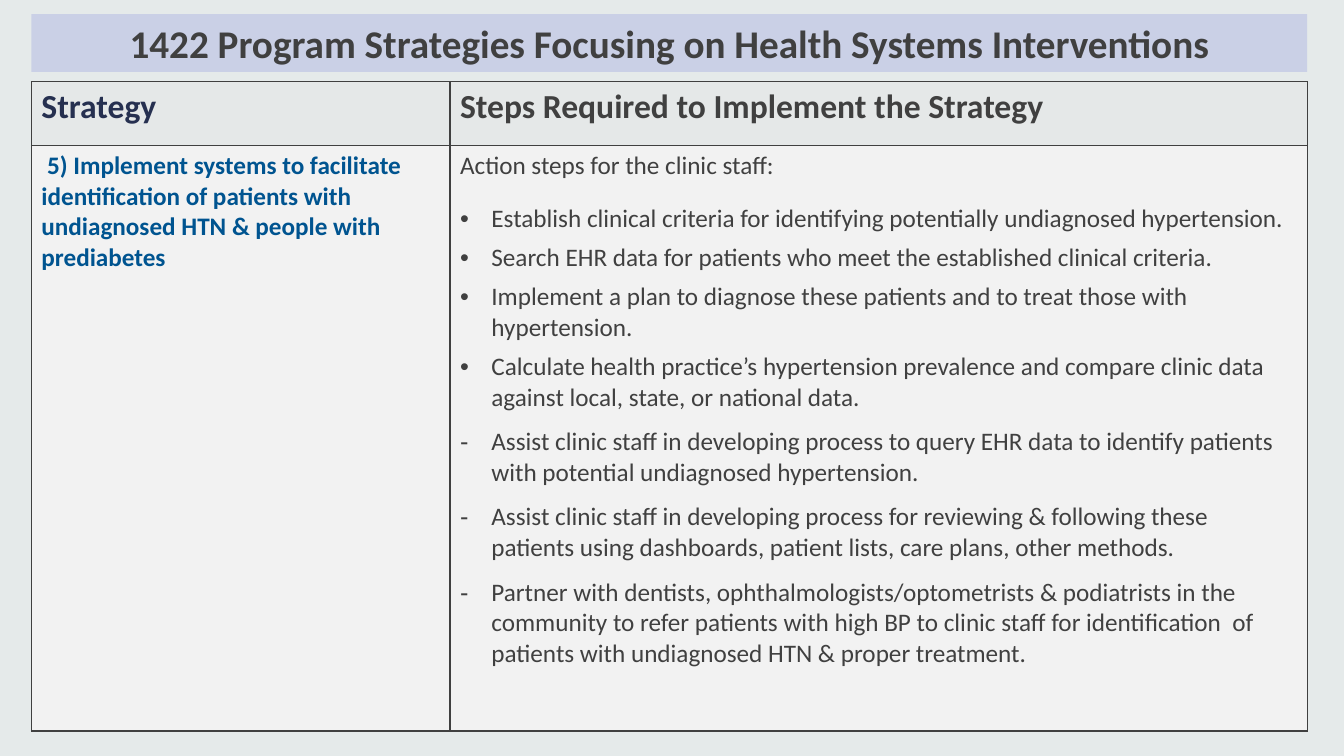
from dataclasses import dataclass

from lxml.etree import SubElement
from pptx import Presentation
from pptx.dml.color import RGBColor
from pptx.enum.shapes import MSO_SHAPE
from pptx.enum.text import MSO_ANCHOR, PP_ALIGN
from pptx.oxml.ns import qn
from pptx.util import Cm, Pt


@dataclass
class Theme:
    font: str = "Calibri"
    back: str = "E5EAEA"
    banner: str = "CAD0E6"
    head: str = "E5E8E8"
    body: str = "F2F2F2"
    ink: str = "404040"
    navy: str = "263050"
    blue: str = "005490"
    title: int = 28
    label: int = 24
    text: int = 18


class Deck:
    def __init__(self, theme):
        self.theme = theme
        self.file = Presentation()
        self.file.slide_width, self.file.slide_height = Cm(33.87), Cm(19.05)
        self.slide = self.file.slides.add_slide(self.file.slide_layouts[6])
        self.paint(self.slide.background.fill, theme.back)

    def paint(self, fill, color):
        fill.solid()
        fill.fore_color.rgb = RGBColor.from_string(color)

    def style(self, para, size, color, bold=False):
        for run in para.runs:
            font = run.font
            font.name, font.size, font.bold = self.theme.font, Pt(size), bold
            font.color.rgb = RGBColor.from_string(color)

    def banner(self, text, left, top, width, height):
        box = self.slide.shapes.add_shape(
            MSO_SHAPE.RECTANGLE, Cm(left), Cm(top), Cm(width), Cm(height))
        box.shadow.inherit = False
        box.line.fill.background()
        self.paint(box.fill, self.theme.banner)
        frame = box.text_frame
        frame.text = text
        frame.vertical_anchor = MSO_ANCHOR.MIDDLE
        para = frame.paragraphs[0]
        para.alignment = PP_ALIGN.CENTER
        self.style(para, self.theme.title, self.theme.ink, True)

    def table(self, left, top, widths, heights):
        grid = self.slide.shapes.add_table(
            len(heights), len(widths), Cm(left), Cm(top),
            Cm(sum(widths)), Cm(sum(heights))).table
        grid.first_row = grid.horz_banding = False
        for col, width in zip(grid.columns, widths):
            col.width = Cm(width)
        for row, height in zip(grid.rows, heights):
            row.height = Cm(height)
        return grid

    def cell(self, cell, text, fill, size, color, bold=False):
        self.border(cell)
        self.paint(cell.fill, fill)
        cell.text_frame.text = text
        for para in cell.text_frame.paragraphs:
            self.style(para, size, color, bold)

    def border(self, cell):
        props = cell._tc.get_or_add_tcPr()
        for side in ("a:lnL", "a:lnR", "a:lnT", "a:lnB"):
            line = SubElement(props, qn(side), w=str(Pt(1)))
            fill = SubElement(line, qn("a:solidFill"))
            SubElement(fill, qn("a:srgbClr"), val=self.theme.ink)

    def bullet(self, para, mark, gap):
        para.space_before = Pt(gap)
        props = para._p.get_or_add_pPr()
        props.set("marL", str(Cm(0.79)))
        props.set("indent", str(-Cm(0.79)))
        SubElement(props, qn("a:buFont"), typeface="Arial")
        SubElement(props, qn("a:buChar"), char=mark)


INTRO = "Action steps for the clinic staff:"

# Mark, gap above in points, wording
STEPS = [
    ("•", 15.8, "Establish clinical criteria for identifying potentially undiagnosed hypertension."),
    ("•", 6, "Search EHR data for patients who meet the established clinical criteria."),
    ("•", 6, "Implement a plan to diagnose these patients and to treat those with hypertension."),
    ("•", 6, "Calculate health practice’s hypertension prevalence and compare clinic data "
             "against local, state, or national data."),
    ("-", 9.8, "Assist clinic staff in developing process to query EHR data to identify "
               "patients with potential undiagnosed hypertension."),
    ("-", 9.8, "Assist clinic staff in developing process for reviewing & following these "
               "patients using dashboards, patient lists, care plans, other methods."),
    ("-", 9.8, "Partner with dentists, ophthalmologists/optometrists & podiatrists in the "
               "community to refer patients with high BP to clinic staff for "
               "identification  of patients with undiagnosed HTN & proper treatment."),
]


def main():
    theme = Theme()
    deck = Deck(theme)

    # Title banner
    deck.banner("1422 Program Strategies Focusing on Health Systems Interventions",
                0.79, 0.36, 32.15, 1.45)

    # Table heads
    grid = deck.table(0.79, 2.06, [10.55, 21.6], [1.6, 14.76])
    deck.cell(grid.cell(0, 0), "Strategy",
              theme.head, theme.label, theme.navy, True)
    deck.cell(grid.cell(0, 1), "Steps Required to Implement the Strategy",
              theme.head, theme.label, theme.ink, True)

    # Strategy and its steps
    deck.cell(grid.cell(1, 0),
              " 5) Implement systems to facilitate identification of patients with "
              "undiagnosed HTN & people with prediabetes",
              theme.body, theme.text, theme.blue, True)
    steps = grid.cell(1, 1)
    deck.cell(steps, "\n".join([INTRO] + [text for _, _, text in STEPS]),
              theme.body, theme.text, theme.ink)
    for para, (mark, gap, _) in zip(steps.text_frame.paragraphs[1:], STEPS):
        deck.bullet(para, mark, gap)

    deck.file.save("out.pptx")


if __name__ == "__main__":
    main()
